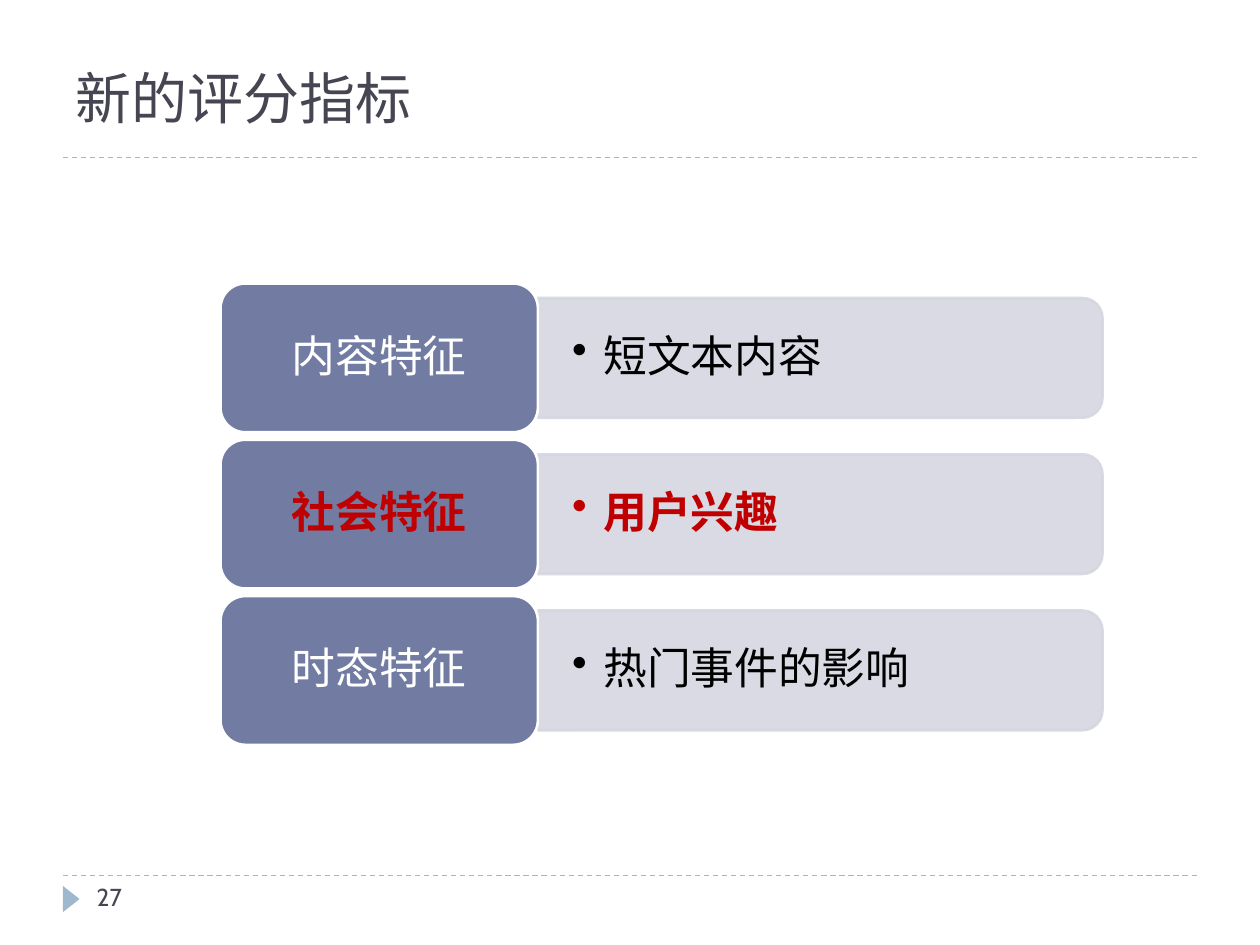
from lxml.etree import SubElement
from pptx import Presentation
from pptx.dml.color import RGBColor
from pptx.enum.dml import MSO_LINE
from pptx.enum.shapes import MSO_CONNECTOR, MSO_SHAPE
from pptx.enum.text import MSO_ANCHOR, PP_ALIGN
from pptx.oxml.ns import qn
from pptx.util import Pt

INK = RGBColor(0x46, 0x46, 0x53)
RULE = RGBColor(0x9F, 0xB8, 0xCD)
LABEL = RGBColor(0x72, 0x7C, 0xA3)
BAR = RGBColor(0xD5, 0xD7, 0xE0)
RED = RGBColor(0xC0, 0x00, 0x00)
WHITE = RGBColor(0xFF, 0xFF, 0xFF)
BLACK = RGBColor(0x00, 0x00, 0x00)

TITLE = "新的评分指标"
PAGE_NUMBER = "27"
FEATURES = [  # label, detail, highlighted
    ("内容特征", "短文本内容", False),
    ("社会特征", "用户兴趣", True),
    ("时态特征", "热门事件的影响", False),
]

LEFT, TOP, PITCH = 126, 162, 89.3
LABEL_W, LABEL_H = 181.4, 85
BAR_W, BAR_H = 322.6, 68.4
DETAIL_W, DETAIL_H = 319, 61.2

prs = Presentation()
prs.slide_width, prs.slide_height = Pt(720), Pt(540)
slide = prs.slides.add_slide(prs.slide_layouts[6])
shapes = slide.shapes


def add_rule(y):
    rule = shapes.add_connector(MSO_CONNECTOR.STRAIGHT, Pt(36), Pt(y), Pt(684), Pt(y))
    rule.line.color.rgb = RULE
    rule.line.width = Pt(0.75)
    rule.line.dash_style = MSO_LINE.DASH
    SubElement(rule._element.spPr, qn("a:effectLst"))


def add_block(kind, x, y, w, h, fill, outline=None):
    block = shapes.add_shape(kind, Pt(x), Pt(y), Pt(w), Pt(h))
    block.shadow.inherit = False
    block.fill.solid()
    block.fill.fore_color.rgb = fill
    if outline is None:
        block.line.fill.background()
    else:
        block.line.color.rgb = outline
        block.line.width = Pt(1.5)
    return block


def add_box(x, y, w, h):
    return shapes.add_textbox(Pt(x), Pt(y), Pt(w), Pt(h))


def write(holder, text, size, color, font="Cabin", bold=False,
          anchor=MSO_ANCHOR.MIDDLE, inset=(7.2, 3.6)):
    frame = holder.text_frame
    frame.word_wrap = True
    frame.vertical_anchor = anchor
    frame.margin_left = frame.margin_right = Pt(inset[0])
    frame.margin_top = frame.margin_bottom = Pt(inset[1])
    paragraph = frame.paragraphs[0]
    run = paragraph.add_run()
    run.text = text
    run.font.name, run.font.size, run.font.bold = font, Pt(size), bold
    run.font.color.rgb = color
    return paragraph


def add_bullet(paragraph, indent):
    props = paragraph._p.get_or_add_pPr()
    props.set("marL", str(Pt(indent)))
    props.set("indent", str(-Pt(indent)))
    SubElement(props, qn("a:buChar")).set("char", "•")


def make_translucent(fill_parent, percent):
    for color in fill_parent.iter(qn("a:srgbClr")):
        SubElement(color, qn("a:alpha")).set("val", str(percent * 1000))


def add_feature(index, label, detail, highlighted):
    top = TOP + index * PITCH
    middle = top + LABEL_H / 2
    bar_left = LEFT + LABEL_W

    # The bar is a top-rounded rectangle turned to the right about its centre.
    bar = add_block(MSO_SHAPE.ROUND_2_SAME_RECTANGLE,
                    bar_left + (BAR_W - BAR_H) / 2, middle - BAR_W / 2,
                    BAR_H, BAR_W, BAR, BAR)
    bar.rotation = 90
    make_translucent(bar._element.spPr, 90)

    detail_box = add_box(bar_left, middle - DETAIL_H / 2, DETAIL_W, DETAIL_H)
    line = write(detail_box, detail, 25, RED if highlighted else BLACK,
                 bold=highlighted, inset=(19.5, 9.75))
    line.line_spacing = 0.9
    add_bullet(line, 18)

    tile = add_block(MSO_SHAPE.ROUNDED_RECTANGLE, LEFT, top, LABEL_W, LABEL_H, LABEL, WHITE)
    line = write(tile, label, 25, RED if highlighted else WHITE, bold=highlighted)
    line.line_spacing = 0.9
    line.alignment = PP_ALIGN.CENTER


for rule_y in (500.4, 90):
    add_rule(rule_y)
marker = add_block(MSO_SHAPE.ISOSCELES_TRIANGLE, 33.2, 509, 15, 9.5, RULE)
marker.rotation = 90

write(add_box(36, 12.2, 648, 66.2), TITLE, 32, INK, "Roboto Slab", anchor=MSO_ANCHOR.BOTTOM)
for position, feature in enumerate(FEATURES):
    add_feature(position, *feature)
write(add_box(48.2, 500.4, 156, 28.8), PAGE_NUMBER, 14, INK, anchor=MSO_ANCHOR.TOP)

prs.save("out.pptx")
